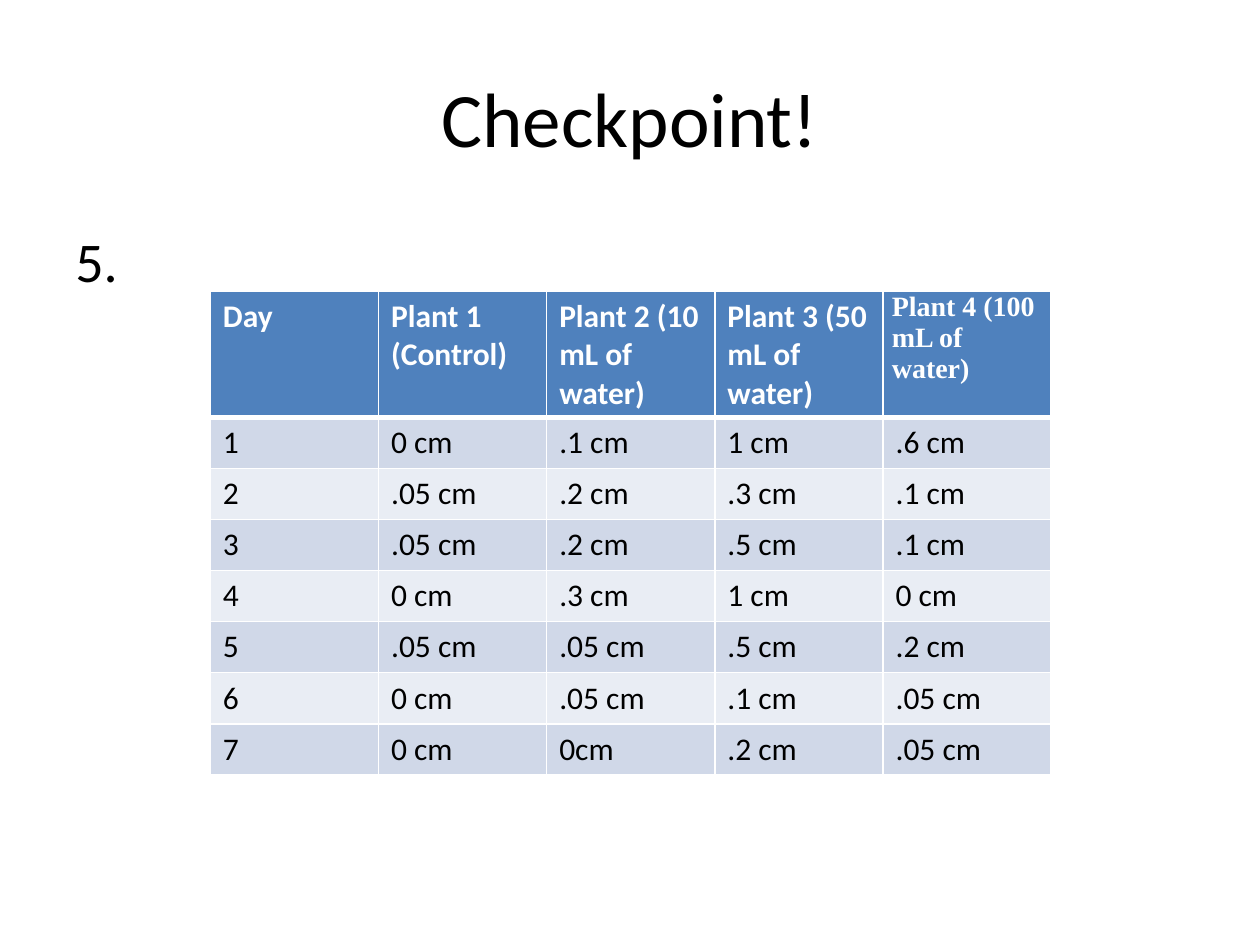
from dataclasses import dataclass

from lxml.etree import SubElement
from pptx import Presentation
from pptx.dml.color import RGBColor as RGB
from pptx.enum.text import MSO_ANCHOR as Anchor, PP_ALIGN as Align
from pptx.oxml.ns import qn
from pptx.util import Cm, Pt


@dataclass(frozen=True)
class Theme:
    font: str = "Calibri"
    alt_font: str = "Times New Roman"
    ink: str = "000000"
    paper: str = "FFFFFF"
    header: str = "4F81BD"
    bands: tuple = ("D0D8E8", "E9EDF4")
    title: int = 44
    body: int = 32
    cell: int = 18
    small: int = 16
    rule: int = 1
    heavy: int = 3


HEADER = ["Day", "Plant 1 (Control)", "Plant 2 (10 mL of water)",
          "Plant 3 (50 mL of water)", "Plant 4 (100 mL of water)"]
GROWTH = [
    ["1", "0 cm", ".1 cm", "1 cm", ".6 cm"],
    ["2", ".05 cm", ".2 cm", ".3 cm", ".1 cm"],
    ["3", ".05 cm", ".2 cm", ".5 cm", ".1 cm"],
    ["4", "0 cm", ".3 cm", "1 cm", "0 cm"],
    ["5", ".05 cm", ".05 cm", ".5 cm", ".2 cm"],
    ["6", "0 cm", ".05 cm", ".1 cm", ".05 cm"],
    ["7", "0 cm", "0cm", ".2 cm", ".05 cm"],
]


class Deck:
    def __init__(self, theme):
        self.theme = theme
        self.prs = Presentation()
        self.prs.slide_width, self.prs.slide_height = Cm(25.4), Cm(19.05)
        self.s = self.prs.slides.add_slide(self.prs.slide_layouts[6])

    def run(self, p, text, size, color, font=None, bold=False):
        r = p.add_run()
        r.text = text
        r.font.name = font or self.theme.font
        r.font.size = Pt(size)
        r.font.bold = bold
        r.font.color.rgb = RGB.from_string(color)

    def text(self, box, text, size, align=Align.LEFT, anchor=Anchor.TOP):
        sp = self.s.shapes.add_textbox(*map(Cm, box))
        tf = sp.text_frame
        tf.word_wrap = True
        tf.vertical_anchor = anchor
        p = tf.paragraphs[0]
        p.alignment = align
        self.run(p, text, size, self.theme.ink)

    def borders(self, cell, top, bottom):
        t = self.theme
        tc_pr = cell._tc.get_or_add_tcPr()
        widths = {"lnL": t.rule, "lnR": t.rule, "lnT": top, "lnB": bottom}
        for side, width in widths.items():
            ln = SubElement(tc_pr, qn(f"a:{side}"), w=str(Pt(width)))
            fill = SubElement(ln, qn("a:solidFill"))
            SubElement(fill, qn("a:srgbClr"), val=t.paper)

    def table(self, left, top, col_width, heights, rows):
        t = self.theme
        n_cols = len(rows[0])
        frame = self.s.shapes.add_table(
            len(rows), n_cols, Cm(left), Cm(top),
            Cm(col_width * n_cols), Cm(sum(heights)))
        tbl = frame.table
        for col in tbl.columns:
            col.width = Cm(col_width)
        for i, (row, height) in enumerate(zip(rows, heights)):
            tbl.rows[i].height = Cm(height)
            head = i == 0
            fill = t.header if head else t.bands[(i - 1) % 2]
            for j, text in enumerate(row):
                cell = tbl.cell(i, j)
                self.borders(cell, t.heavy if i == 1 else t.rule,
                             t.heavy if head else t.rule)
                cell.fill.solid()
                cell.fill.fore_color.rgb = RGB.from_string(fill)
                size, font = t.cell, t.font
                if head and j == n_cols - 1:
                    size, font = t.small, t.alt_font
                    cell.margin_left = cell.margin_right = Cm(0.18)
                    cell.margin_top = cell.margin_bottom = 0
                self.run(cell.text_frame.paragraphs[0], text, size,
                         t.paper if head else t.ink, font, head)


def main():
    theme = Theme()
    deck = Deck(theme)
    deck.text((1.27, 0.76, 22.86, 3.18), "Checkpoint!", theme.title,
              Align.CENTER, Anchor.MIDDLE)
    deck.text((1.27, 4.45, 22.86, 12.57), "5.", theme.body)
    deck.table(4.24, 5.87, 3.39, [2.54] + [1.03] * len(GROWTH),
               [HEADER] + GROWTH)
    deck.prs.save("out.pptx")


if __name__ == "__main__":
    main()
